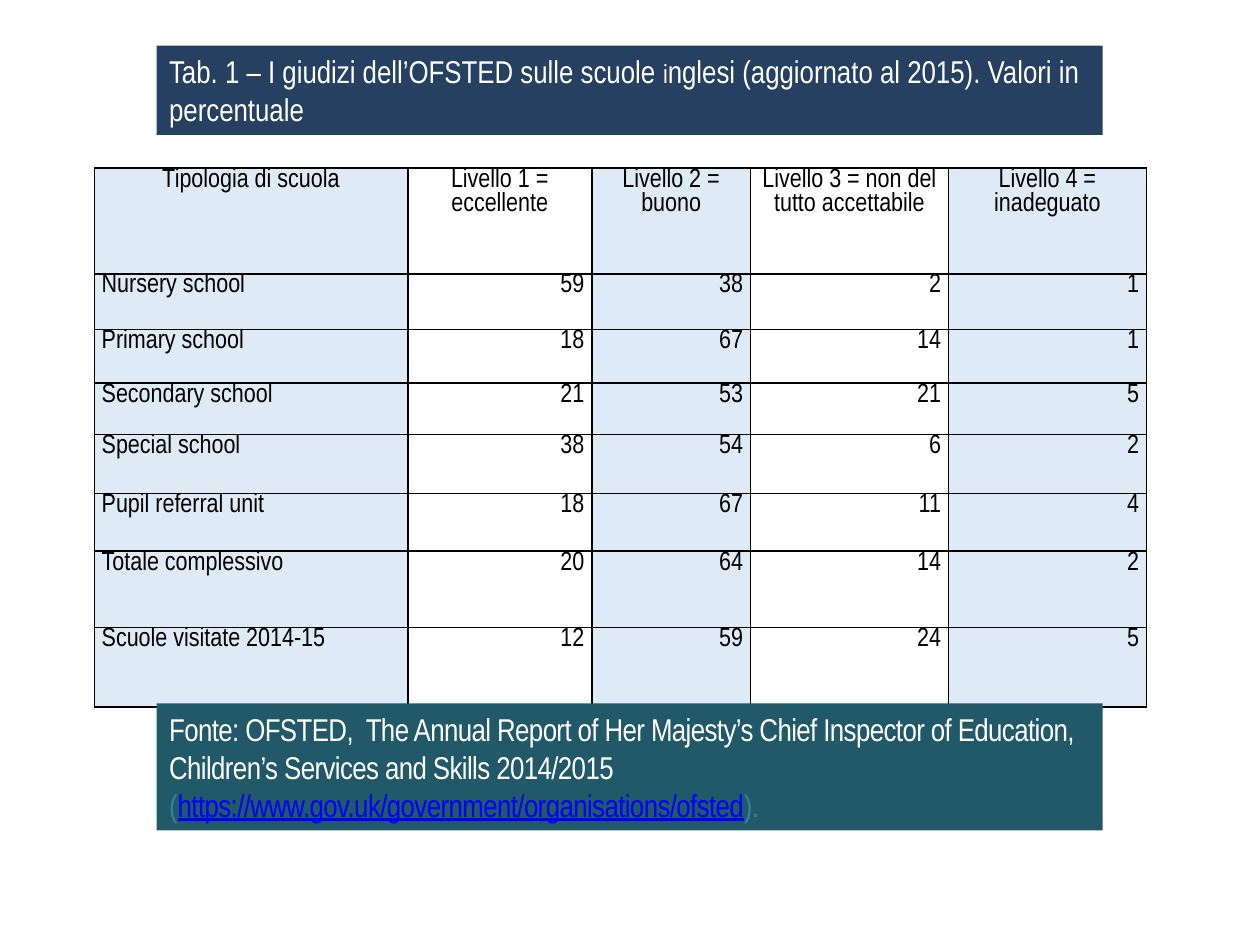
import lxml.etree
import pptx
import pptx.dml.color
import pptx.enum.shapes
import pptx.enum.text
import pptx.oxml.ns
import pptx.util

Cm, Pt = pptx.util.Cm, pptx.util.Pt
ALIGN = pptx.enum.text.PP_ALIGN
qn = pptx.oxml.ns.qn

FONT = "Arial Narrow"
BLACK, WHITE, PALE_BLUE = "000000", "FFFFFF", "DEEBF7"
NAVY, DARK_TEAL, TEAL, LINK_BLUE = "254061", "215968", "31859C", "0000FF"

COLUMN_WIDTHS = [6.32, 3.71, 3.2, 3.99, 3.99]
ROW_HEIGHTS = [2.13, 1.12, 1.08, 1.04, 1.19, 1.16, 1.54, 1.6]
RATINGS = [
    ["Tipologia di scuola", "Livello 1 = eccellente", "Livello 2 = buono",
     "Livello 3 = non del tutto accettabile", "Livello 4 = inadeguato"],
    ["Nursery school", 59, 38, 2, 1],
    ["Primary school", 18, 67, 14, 1],
    ["Secondary school", 21, 53, 21, 5],
    ["Special school", 38, 54, 6, 2],
    ["Pupil referral unit", 18, 67, 11, 4],
    ["Totale complessivo", 20, 64, 14, 2],
    ["Scuole visitate 2014-15", 12, 59, 24, 5],
]
TITLE = [
    ("Tab. 1 – I giudizi dell’OFSTED sulle scuole ", 18, WHITE, False),
    ("i", 15, WHITE, False),
    ("nglesi (aggiornato al 2015). Valori in percentuale", 18, WHITE, False),
]
SOURCE = [
    ("Fonte: OFSTED,  The Annual Report of Her Majesty’s Chief Inspector of Education, "
     "Children’s Services and Skills 2014/2015 ", 18, WHITE, False),
    ("(", 18, TEAL, False),
    ("https://www.gov.uk/government/organisations/ofsted", 18, LINK_BLUE, True),
    (").", 18, TEAL, False),
]


def rgb(value):
    """Turn a hex string into a colour."""
    return pptx.dml.color.RGBColor.from_string(value)


def style_run(run, size, color):
    """Set the font, size and colour of a run."""
    run.font.name = FONT
    run.font.size = Pt(size)
    run.font.color.rgb = rgb(color)


def add_borders(cell, color, width):
    """Draw a solid line on all four sides of a cell."""
    properties = cell._tc.get_or_add_tcPr()
    for position, side in enumerate(("a:lnL", "a:lnR", "a:lnT", "a:lnB")):
        line = lxml.etree.Element(qn(side), w=str(Pt(width)))
        fill = lxml.etree.SubElement(line, qn("a:solidFill"))
        lxml.etree.SubElement(fill, qn("a:srgbClr"), val=color)
        properties.insert(position, line)


def fill_cell(cell, content, align, shaded):
    """Write and format one table cell."""
    cell.margin_left = cell.margin_right = Cm(0.15)
    cell.margin_top = cell.margin_bottom = 0
    if shaded:
        cell.fill.solid()
        cell.fill.fore_color.rgb = rgb(PALE_BLUE)
    else:
        cell.fill.background()
    add_borders(cell, BLACK, 1)
    paragraph = cell.text_frame.paragraphs[0]
    paragraph.text = str(content)
    paragraph.alignment = align
    paragraph.line_spacing = 1.0
    style_run(paragraph.runs[0], 15, BLACK)


def add_ratings(slide, left, top):
    """Place the table of school ratings."""
    ratings = slide.shapes.add_table(
        len(ROW_HEIGHTS), len(COLUMN_WIDTHS), Cm(left), Cm(top),
        Cm(sum(COLUMN_WIDTHS)), Cm(sum(ROW_HEIGHTS))).table
    ratings.first_row = ratings.horz_banding = False
    for column, width in zip(ratings.columns, COLUMN_WIDTHS):
        column.width = Cm(width)
    for row, height in zip(ratings.rows, ROW_HEIGHTS):
        row.height = Cm(height)
    for r, record in enumerate(RATINGS):
        for c, content in enumerate(record):
            align = ALIGN.CENTER if r == 0 else ALIGN.RIGHT if c else ALIGN.LEFT
            fill_cell(ratings.cell(r, c), content, align, c % 2 == 0)


def add_banner(slide, left, top, width, height, color, parts, spacing=0):
    """Place a filled band holding one paragraph of styled parts."""
    banner = slide.shapes.add_shape(
        pptx.enum.shapes.MSO_SHAPE.RECTANGLE, Cm(left), Cm(top), Cm(width), Cm(height))
    banner.shadow.inherit = False
    banner.fill.solid()
    banner.fill.fore_color.rgb = rgb(color)
    banner.line.fill.background()
    frame = banner.text_frame
    frame.word_wrap = True
    frame.auto_size = pptx.enum.text.MSO_AUTO_SIZE.SHAPE_TO_FIT_TEXT
    frame.vertical_anchor = pptx.enum.text.MSO_ANCHOR.MIDDLE
    paragraph = frame.paragraphs[0]
    paragraph.alignment = ALIGN.LEFT
    for wording, size, text_color, underlined in parts:
        run = paragraph.add_run()
        run.text = wording
        style_run(run, size, text_color)
        run.font.underline = underlined
        if spacing:
            run.font._element.set("spc", str(round(spacing * 100)))


def main():
    """Build the slide and save it."""
    deck = pptx.Presentation()
    deck.slide_width, deck.slide_height = Cm(25.4), Cm(19.05)
    slide = deck.slides.add_slide(deck.slide_layouts[6])
    add_ratings(slide, 1.9, 3.39)
    add_banner(slide, 3.16, 0.92, 19.07, 1.8, NAVY, TITLE)
    add_banner(slide, 3.16, 14.18, 19.07, 2.56, DARK_TEAL, SOURCE, spacing=-0.35)
    deck.save("out.pptx")


if __name__ == "__main__":
    main()
